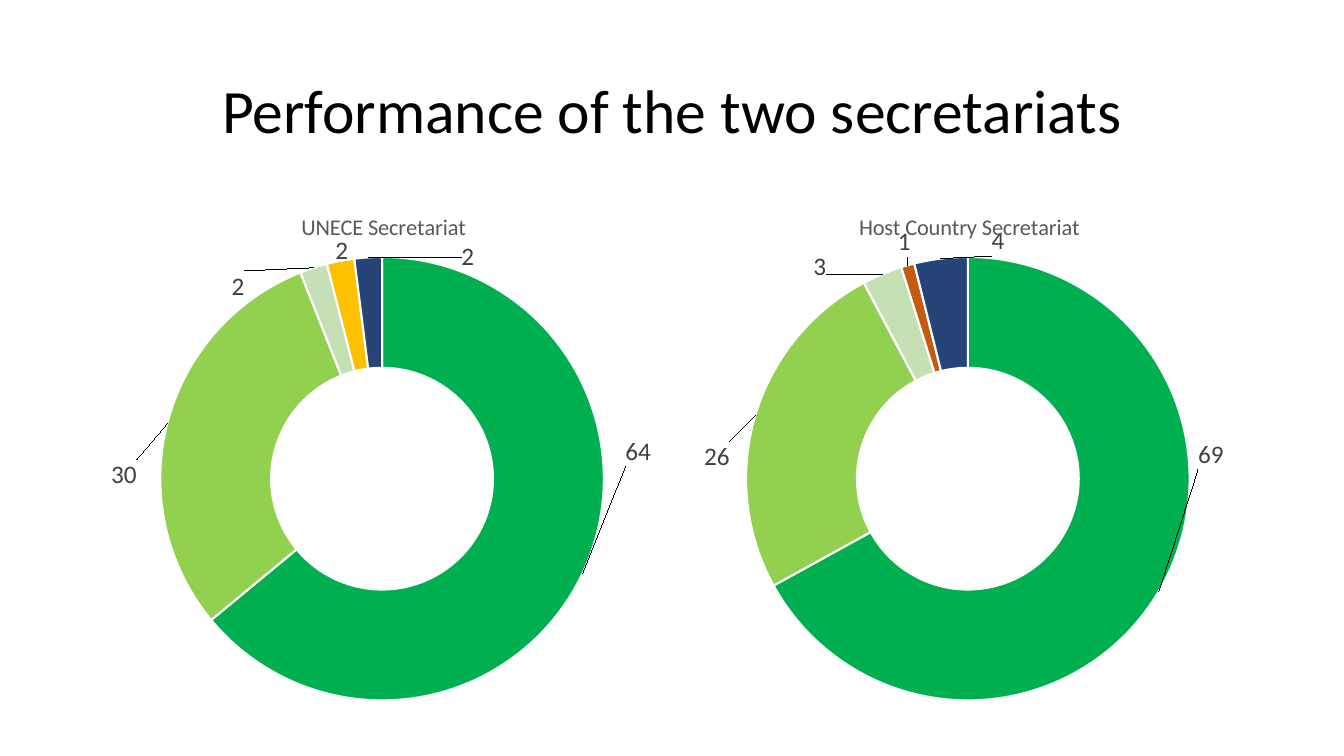
import math
from pptx import Presentation
from pptx import util as u
from pptx.chart import data as cd
from pptx.dml import color
from pptx.enum import chart as ec, text
from pptx.oxml import parse_xml
from pptx.oxml.ns import nsdecls

HUES = {"black": "000000", "white": "FFFFFF", "title": "595959", "label": "404040",
        "green": "00B050", "lime": "92D050", "pale": "C5E0B4", "gold": "FFC000",
        "leaf": "70AD47", "blue": "5B9BD5", "rust": "C55A11", "navy": "264478"}
RADIUS, MID = 2.2, 4.75
TOP, HIGH = 1.85, 5.25


def style(font, size, hue):
    for key, val in {"name": "Calibri", "size": u.Pt(size), "bold": False}.items():
        setattr(font, key, val)
    font.color.rgb = color.RGBColor.from_string(HUES[hue])


def layout(x, y, w=None, h=None):
    parts = {"xMode": "edge", "yMode": "edge"} if w or h == 0 else {}
    parts.update(x=round(x, 4), y=round(y, 4))
    if w:
        parts = {"layoutTarget": "inner", **parts, "w": round(w, 4), "h": round(h, 4)}
    tags = "".join(f'<c:{key} val="{val}"/>' for key, val in parts.items())
    return parse_xml(f'<c:layout {nsdecls("c")}><c:manualLayout>{tags}</c:manualLayout></c:layout>')


deck = Presentation()
deck.slide_width, deck.slide_height = u.Inches(13.33), u.Inches(7.5)
slide = deck.slides.add_slide(deck.slide_layouts[6])

box = slide.shapes.add_textbox(u.Inches(0.92), u.Inches(0.4), u.Inches(11.5), u.Inches(1.45))
frame = box.text_frame
for key, val in {"word_wrap": True, "vertical_anchor": text.MSO_ANCHOR.MIDDLE}.items():
    setattr(frame, key, val)
para = frame.paragraphs[0]
para.alignment, para.line_spacing = text.PP_ALIGN.CENTER, 0.9
run = para.add_run()
run.text = "Performance of the two secretariats"
style(run.font, 44, "black")

rings = [
    {"name": "UNECE Secretariat", "left": 0.92, "wide": 5.75, "mid": 3.79, "head": 2.95,
     "vals": [64, 30, 2, 0, 2, 0, 2],
     "hues": ["green", "lime", "pale", "gold", "gold", "leaf", "navy"],
     "spots": {0: (6.33, 4.48), 1: (1.23, 4.71), 2: (2.36, 2.84),
               4: (3.39, 2.49), 6: (4.64, 2.55)}},
    {"name": "Host Country Secretariat", "left": 6.78, "wide": 5.65, "mid": 9.6, "head": 8.48,
     "vals": [69, 26, 3, 0, 0, 1, 4],
     "hues": ["green", "lime", "pale", "gold", "blue", "rust", "navy"],
     "spots": {0: (12.01, 4.51), 1: (7.11, 4.53), 2: (8.13, 2.65),
               5: (8.97, 2.4), 6: (9.9, 2.39)}},
]

for ring in rings:
    left, wide, vals = ring["left"], ring["wide"], ring["vals"]
    data = cd.CategoryChartData()
    data.categories = [str(n + 1) for n in range(len(vals))]
    data.add_series("Series 1", vals)
    chart = slide.shapes.add_chart(ec.XL_CHART_TYPE.DOUGHNUT, u.Inches(left), u.Inches(TOP),
                                   u.Inches(wide), u.Inches(HIGH), data).chart
    style(chart.font, 10, "black")
    chart.has_legend = False
    chart.has_title = True
    head = chart.chart_title.text_frame.paragraphs[0].add_run()
    head.text = ring["name"]
    style(head.font, 16, "title")

    root = chart.element
    for old in root.xpath("c:chart/c:title/c:layout | c:chart/c:plotArea/c:layout"):
        old.getparent().remove(old)
    root.xpath("c:chart/c:title/c:tx")[0].addnext(
        layout((ring["head"] - left) / wide, 0.04, h=0))
    root.xpath("c:chart/c:plotArea")[0].insert(0, layout(
        (ring["mid"] - RADIUS - left) / wide, (MID - RADIUS - TOP) / HIGH,
        2 * RADIUS / wide, 2 * RADIUS / HIGH))

    plot = chart.plots[0]
    plot.vary_by_categories = True
    series = plot.series[0]
    labels = series.data_labels
    labels.show_value = True
    style(labels.font, 18, "label")
    done = 0
    for n, val in enumerate(vals):
        point = series.points[n]
        point.format.fill.solid()
        point.format.fill.fore_color.rgb = color.RGBColor.from_string(HUES[ring["hues"][n]])
        point.format.line.color.rgb = color.RGBColor.from_string(HUES["white"])
        point.format.line.width = u.Pt(1.5)
        style(point.data_label.font, 18, "label")
        label = root.xpath(f"//c:dLbl[c:idx/@val='{n}']")[0]
        if n in ring["spots"]:
            x, y = ring["spots"][n]
            turn = 2 * math.pi * (done + val / 2) / sum(vals)
            dx = x - ring["mid"] - 0.75 * RADIUS * math.sin(turn)
            dy = y - MID + 0.75 * RADIUS * math.cos(turn)
            label[0].addnext(layout(dx / wide, dy / HIGH))
        else:
            for part in list(label)[1:]:
                label.remove(part)
            label.append(parse_xml(f'<c:delete {nsdecls("c")} val="1"/>'))
        done += val

deck.save("out.pptx")
